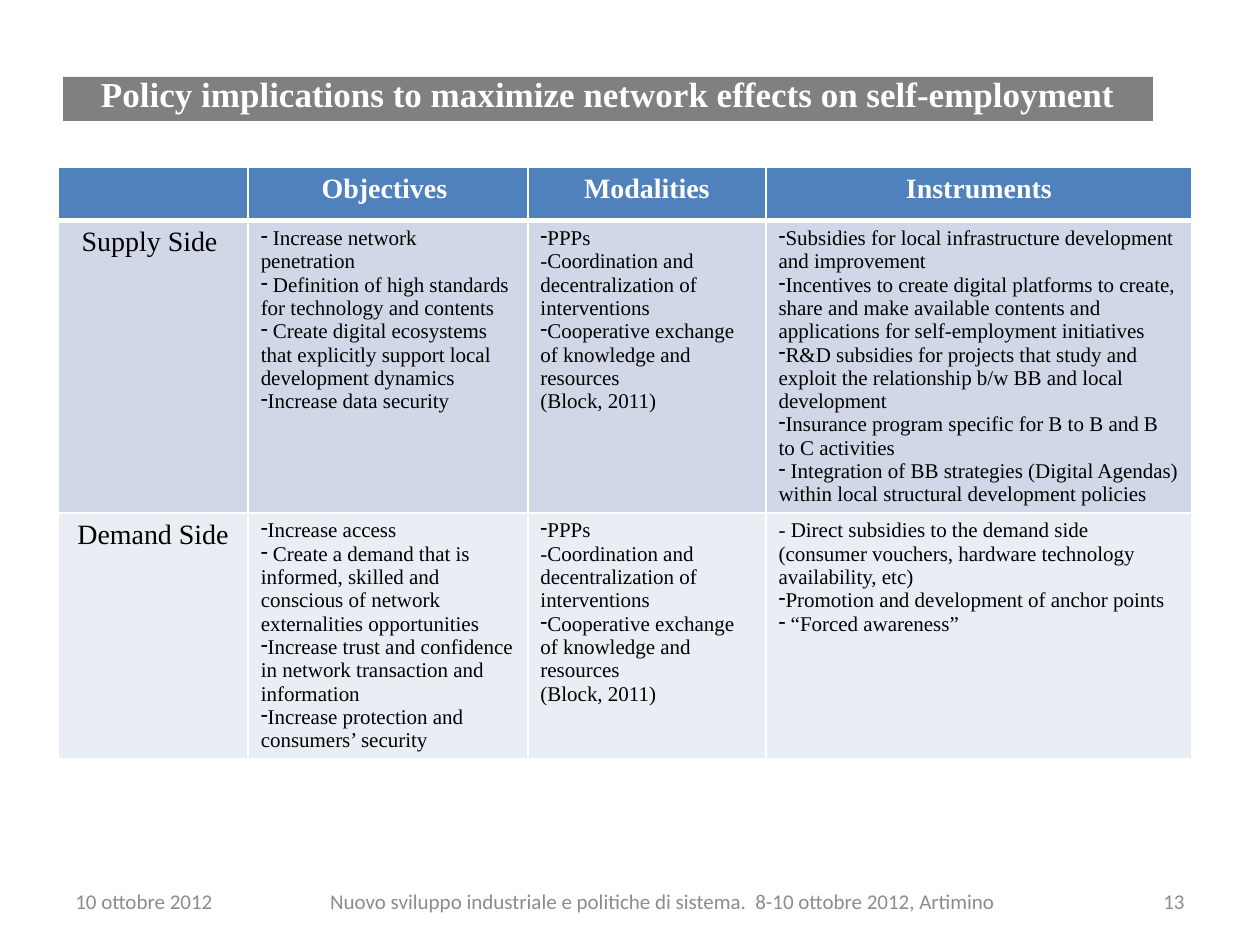
from lxml import etree
from pptx import Presentation
from pptx.dml.color import RGBColor
from pptx.enum.text import MSO_ANCHOR, MSO_AUTO_SIZE, PP_ALIGN
from pptx.oxml.ns import qn
from pptx.util import Inches, Pt

LEFT, CENTER, RIGHT = PP_ALIGN.LEFT, PP_ALIGN.CENTER, PP_ALIGN.RIGHT
MIDDLE, BOTTOM = MSO_ANCHOR.MIDDLE, MSO_ANCHOR.BOTTOM
NO_AUTOFIT = MSO_AUTO_SIZE.NONE
TITLE_ONLY = 5

SERIF, SANS = "Times New Roman", "Calibri"
WHITE, BLACK, GRAY, FOOTER_GRAY = "FFFFFF", "000000", "808080", "8C8C8C"
HEADER_BLUE = "4F81BD"

TITLE = "Policy implications to maximize network effects on self-employment"
FOOTERS = [  # text, left, width, alignment
    ("10 ottobre 2012", 0.5, 2.33, LEFT),
    ("Nuovo sviluppo industriale e politiche di sistema.  8-10 ottobre 2012, Artimino",
     2.46, 5.6, CENTER),
    ("13", 7.17, 2.33, RIGHT),
]

COLUMN_WIDTHS = [1.51, 2.22, 1.89, 3.38]
ROW_HEIGHTS = [0.42, 2.32, 1.94]
HEADERS = ["", "Objectives ", "Modalities", "Instruments"]

# Lines that start with this mark get a dash bullet
MARK = "*"
MODALITIES = [
    "*PPPs",
    "-Coordination and decentralization of interventions",
    "*Cooperative exchange of knowledge and resources",
    "(Block, 2011)",
]
SIDES = [  # row label, fill, cell contents
    ("Supply Side ", "D0D8E8", [
        ["* Increase network penetration",
         "* Definition of high standards for technology and contents",
         "* Create digital ecosystems that explicitly support local development dynamics",
         "*Increase data security"],
        MODALITIES,
        ["*Subsidies for local infrastructure development and improvement",
         "*Incentives to create digital platforms to create, share and make available "
         "contents and applications for self-employment initiatives",
         "*R&D subsidies for projects that study and exploit the relationship b/w BB "
         "and local development",
         "*Insurance program specific for B to B and B to C activities",
         "* Integration of BB strategies (Digital Agendas) within local structural "
         "development policies"],
    ]),
    ("Demand Side", "E9EDF4", [
        ["*Increase access",
         "* Create a demand that is informed, skilled and conscious of network "
         "externalities opportunities",
         "*Increase trust and confidence in network transaction and information",
         "*Increase protection and consumers’ security"],
        MODALITIES,
        ["- Direct subsidies to the demand side (consumer vouchers, hardware technology "
         "availability, etc)",
         "*Promotion and development of anchor points",
         "* “Forced awareness”"],
    ]),
]


def color(hex_value):
    return RGBColor.from_string(hex_value)


def add_dash_bullet(paragraph):
    properties = paragraph._p.get_or_add_pPr()
    properties.set("marL", "0")
    properties.set("indent", "0")
    etree.SubElement(properties, qn("a:buFontTx"))
    etree.SubElement(properties, qn("a:buChar")).set("char", "-")


def write_lines(text_frame, lines, size, hex_value, font=SERIF, bold=False, alignment=LEFT):
    for index, line in enumerate(lines):
        paragraph = text_frame.paragraphs[0] if index == 0 else text_frame.add_paragraph()
        paragraph.text = line.removeprefix(MARK)
        paragraph.alignment = alignment
        paragraph.font.name = font
        paragraph.font.size = Pt(size)
        paragraph.font.bold = bold
        paragraph.font.color.rgb = color(hex_value)
        if line.startswith(MARK):
            add_dash_bullet(paragraph)


def set_borders(cell, top, bottom):
    """White lines on all four sides, widths in points."""
    properties = cell._tc.get_or_add_tcPr()
    sides = [("a:lnL", 1), ("a:lnR", 1), ("a:lnT", top), ("a:lnB", bottom)]
    for index, (tag, width) in enumerate(sides):
        line = etree.Element(qn(tag), w=str(Pt(width)))
        fill = etree.SubElement(line, qn("a:solidFill"))
        etree.SubElement(fill, qn("a:srgbClr")).set("val", WHITE)
        properties.insert(index, line)


def fill_cell(cell, lines, fill, size, hex_value=BLACK, bold=False, alignment=LEFT,
              top=1, bottom=1):
    cell.fill.solid()
    cell.fill.fore_color.rgb = color(fill)
    set_borders(cell, top, bottom)
    write_lines(cell.text_frame, lines, size, hex_value, bold=bold, alignment=alignment)


def add_title(slide):
    title = slide.shapes.title
    title.left, title.top = Inches(0.5), Inches(0.61)
    title.width, title.height = Inches(8.65), Inches(0.35)
    title.fill.solid()
    title.fill.fore_color.rgb = color(GRAY)
    text_frame = title.text_frame
    text_frame.auto_size = NO_AUTOFIT
    text_frame.vertical_anchor = BOTTOM
    write_lines(text_frame, [TITLE], 20, WHITE, bold=True, alignment=CENTER)


def add_policy_table(slide):
    table = slide.shapes.add_table(
        len(ROW_HEIGHTS), len(COLUMN_WIDTHS), Inches(0.46), Inches(1.33),
        Inches(sum(COLUMN_WIDTHS)), Inches(sum(ROW_HEIGHTS))).table
    for column, width in zip(table.columns, COLUMN_WIDTHS):
        column.width = Inches(width)
    for row, height in zip(table.rows, ROW_HEIGHTS):
        row.height = Inches(height)

    # Header row, set off by a thicker line
    for index, header in enumerate(HEADERS):
        fill_cell(table.cell(0, index), [header], HEADER_BLUE, 16, WHITE,
                  bold=True, alignment=CENTER, bottom=3)

    # One row for each side of the market
    for row, (label, fill, contents) in enumerate(SIDES, start=1):
        top = 3 if row == 1 else 1
        fill_cell(table.cell(row, 0), [label], fill, 16, alignment=CENTER, top=top)
        for column, lines in enumerate(contents, start=1):
            fill_cell(table.cell(row, column), lines, fill, 12, top=top)


def add_footer(slide, text, left, width, alignment):
    box = slide.shapes.add_textbox(Inches(left), Inches(6.95), Inches(width), Inches(0.4))
    text_frame = box.text_frame
    text_frame.word_wrap = True
    text_frame.vertical_anchor = MIDDLE
    write_lines(text_frame, [text], 12, FOOTER_GRAY, font=SANS, alignment=alignment)


def main():
    presentation = Presentation()
    presentation.slide_width, presentation.slide_height = Inches(10), Inches(7.5)
    slide = presentation.slides.add_slide(presentation.slide_layouts[TITLE_ONLY])
    add_title(slide)
    add_policy_table(slide)
    for footer in FOOTERS:
        add_footer(slide, *footer)
    presentation.save("out.pptx")


if __name__ == "__main__":
    main()
